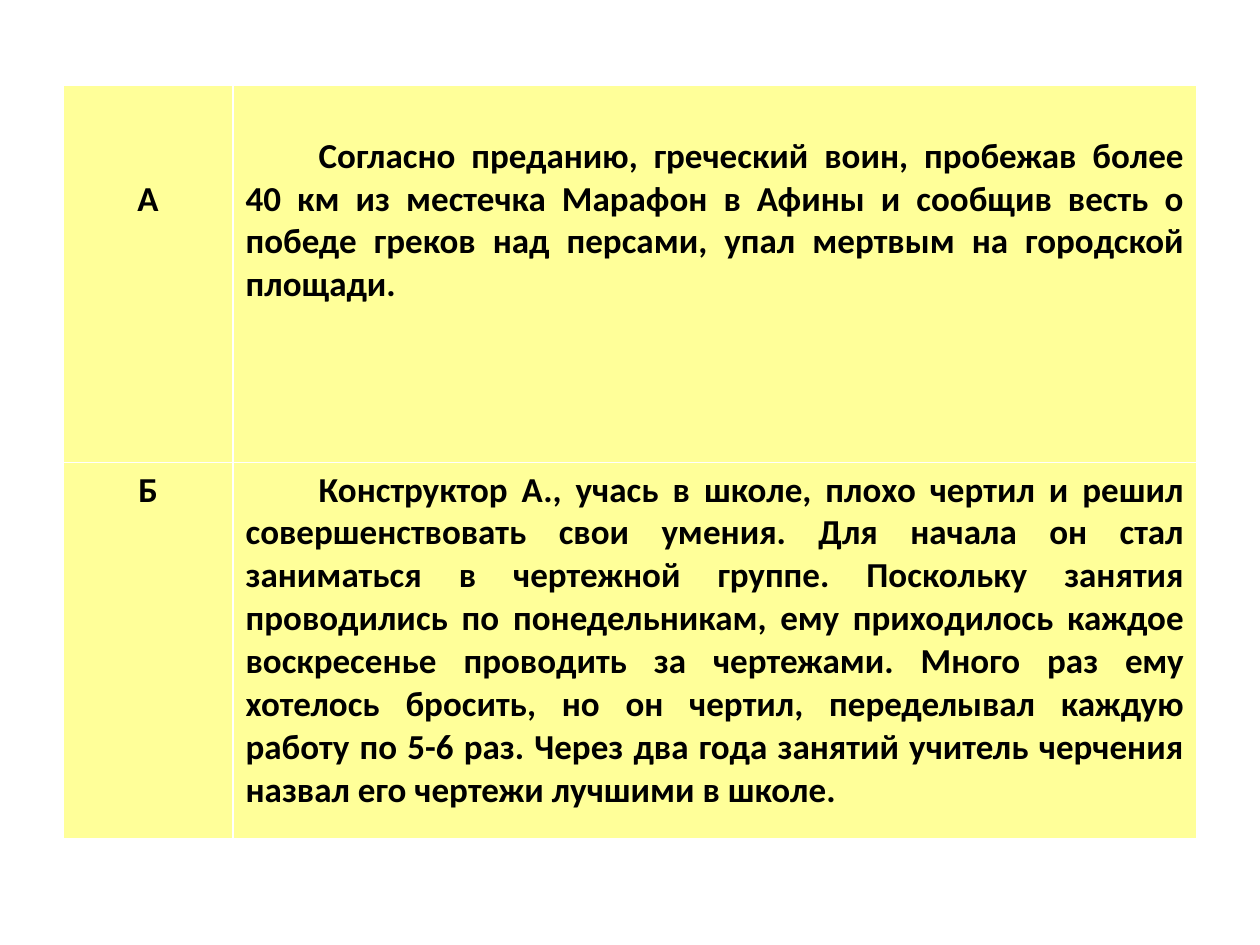
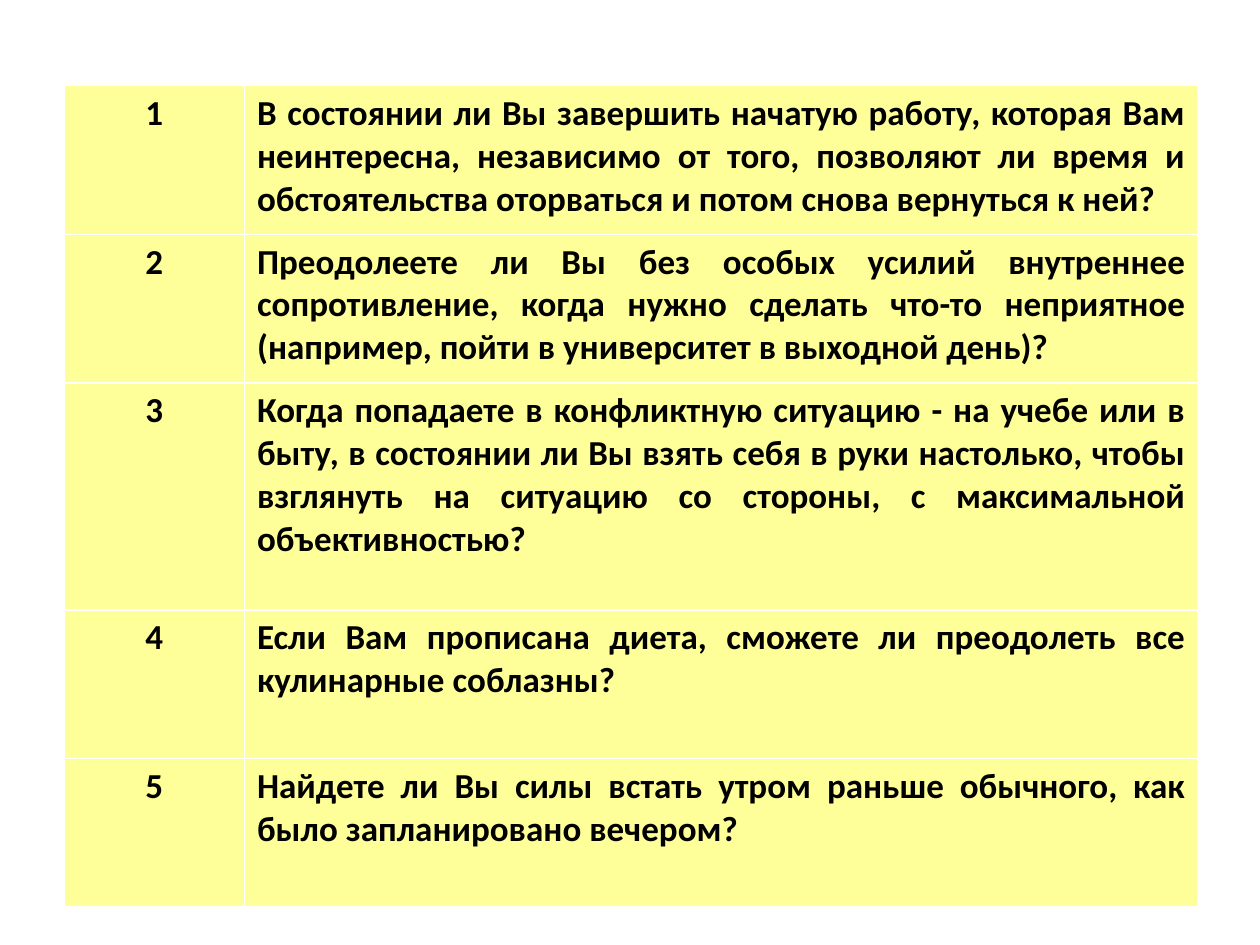
from dataclasses import dataclass

from pptx import Presentation
from pptx.dml.color import RGBColor
from pptx.enum.text import PP_ALIGN
from pptx.util import Inches, Pt

CENTER = PP_ALIGN.CENTER
JUSTIFY = PP_ALIGN.JUSTIFY
BLANK_LAYOUT = 6

STORIES = [
    ("А", "Согласно преданию, греческий воин, пробежав более 40 км из местечка "
          "Марафон в Афины и сообщив весть о победе греков над персами, упал "
          "мертвым на городской площади."),
    ("Б", "Конструктор А., учась в школе, плохо чертил и решил совершенствовать "
          "свои умения. Для начала он стал заниматься в чертежной группе. "
          "Поскольку занятия проводились по понедельникам, ему приходилось каждое "
          "воскресенье проводить за чертежами. Много раз ему хотелось бросить, но "
          "он чертил, переделывал каждую работу по 5-6 раз. Через два года занятий "
          "учитель черчения назвал его чертежи лучшими в школе."),
]

QUESTIONS = [
    "В состоянии ли Вы завершить начатую работу, которая Вам неинтересна, "
    "независимо от того, позволяют ли время и обстоятельства оторваться и потом "
    "снова вернуться к ней?",
    "Преодолеете ли Вы без особых усилий внутреннее сопротивление, когда нужно "
    "сделать что-то неприятное (например, пойти в университет в выходной день)?",
    "Когда попадаете в конфликтную ситуацию - на учебе или в быту, в состоянии ли "
    "Вы взять себя в руки настолько, чтобы взглянуть на ситуацию со стороны, с "
    "максимальной объективностью?",
    "Если Вам прописана диета, сможете ли преодолеть все кулинарные соблазны?",
    "Найдете ли Вы силы встать утром раньше обычного, как было запланировано "
    "вечером?",
]


@dataclass(frozen=True)
class Theme:
    font: str = "Calibri"
    size: float = 20
    text: RGBColor = RGBColor(0, 0, 0)
    fill: RGBColor = RGBColor(0xFF, 0xFF, 0x99)
    line: float = 0.34
    margin: float = 0.05


THEME = Theme()
SLIDE_WIDTH, SLIDE_HEIGHT = 10, 7.5
TABLE_TOP, TABLE_WIDTH = 0.68, 9

TABLES = [
    {
        "rows": STORIES,
        "left": 0.5,
        "label_share": 0.15,
        "heights": [2.99] * len(STORIES),
        "indent": 0.58,
        "lead_lines": {0: (2, 1)},
    },
    {
        "rows": [(str(number), text) for number, text in enumerate(QUESTIONS, 1)],
        "left": 0.51,
        "label_share": 0.159,
        "heights": [1.18, 1.18, 1.8, 1.18, 1.18],
        "indent": 0,
        "lead_lines": {},
    },
]


def write_cell(cell, text, *, alignment, indent=0, lead_lines=0):
    cell.fill.solid()
    cell.fill.fore_color.rgb = THEME.fill
    cell.margin_top = Inches(THEME.margin + lead_lines * THEME.line)
    paragraph = cell.text_frame.paragraphs[0]
    paragraph.alignment = alignment
    if indent:
        paragraph._p.get_or_add_pPr().set("indent", str(Inches(indent)))
    run = paragraph.add_run()
    run.text = text
    run.font.name = THEME.font
    run.font.size = Pt(THEME.size)
    run.font.bold = True
    run.font.color.rgb = THEME.text


def add_labelled_table(slide, rows, left, label_share, heights, indent, lead_lines):
    frame = slide.shapes.add_table(
        len(rows), 2, Inches(left), Inches(TABLE_TOP),
        Inches(TABLE_WIDTH), Inches(sum(heights)))
    table = frame.table
    table.horz_banding = False
    for column, share in zip(table.columns, (label_share, 1 - label_share)):
        column.width = Inches(TABLE_WIDTH * share)
    for index, (label, text) in enumerate(rows):
        table.rows[index].height = Inches(heights[index])
        label_lead, text_lead = lead_lines.get(index, (0, 0))
        write_cell(table.cell(index, 0), label, alignment=CENTER,
                   lead_lines=label_lead)
        write_cell(table.cell(index, 1), text, alignment=JUSTIFY,
                   indent=indent, lead_lines=text_lead)


def main():
    presentation = Presentation()
    presentation.slide_width = Inches(SLIDE_WIDTH)
    presentation.slide_height = Inches(SLIDE_HEIGHT)
    for content in TABLES:
        slide = presentation.slides.add_slide(presentation.slide_layouts[BLANK_LAYOUT])
        add_labelled_table(slide, **content)
    presentation.save("out.pptx")


if __name__ == "__main__":
    main()
